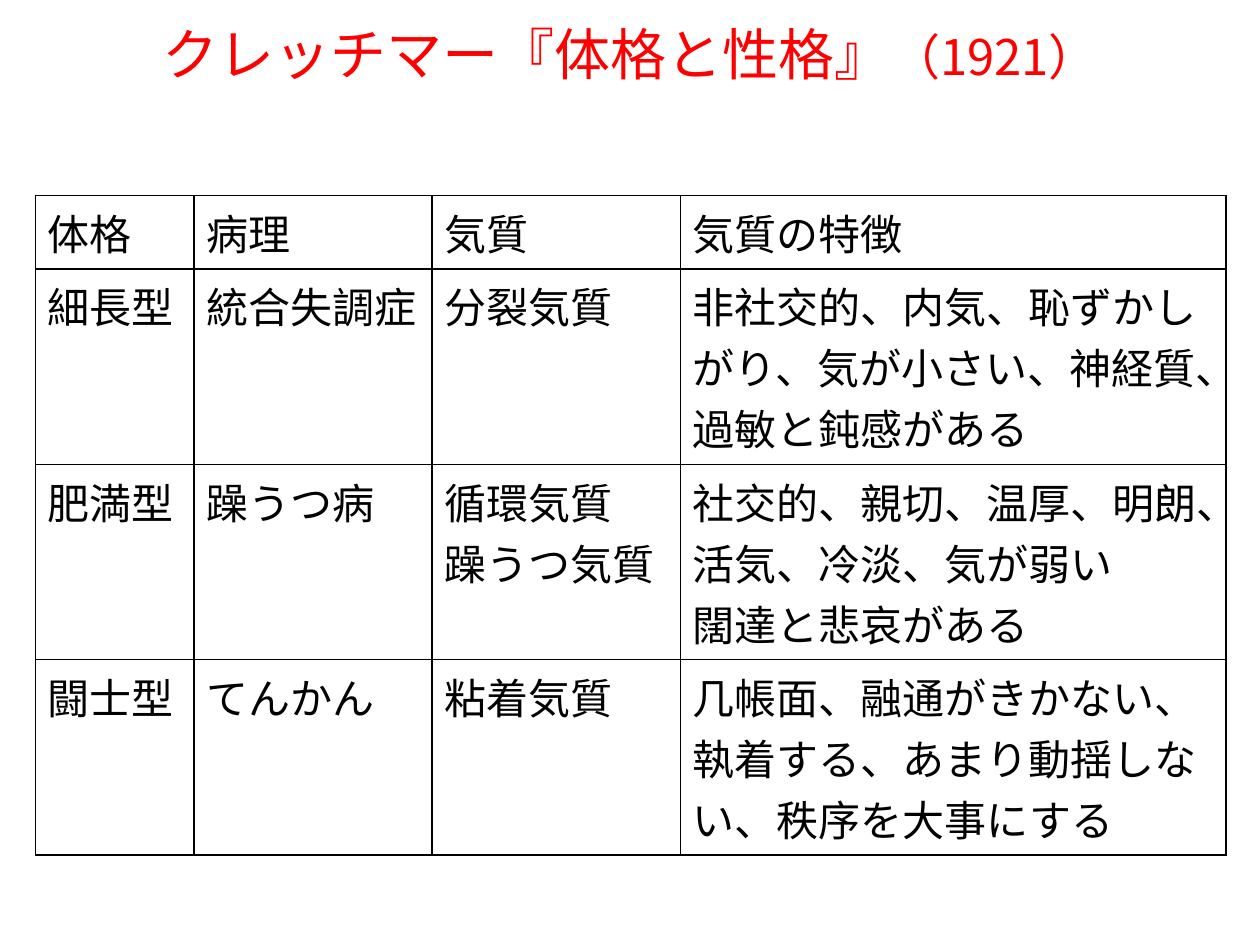
from dataclasses import dataclass

from lxml.etree import SubElement
from pptx import Presentation
from pptx.dml.color import RGBColor
from pptx.enum.text import MSO_ANCHOR, MSO_AUTO_SIZE, PP_ALIGN
from pptx.oxml.ns import qn
from pptx.util import Inches, Pt


@dataclass(frozen=True)
class Theme:
    font: str = "Noto Sans CJK JP"
    title_color: str = "FF0000"
    text_color: str = "000000"
    border_color: str = "000000"
    border_width: float = 1
    title_size: int = 32
    year_size: int = 28
    table_size: int = 24


@dataclass(frozen=True)
class BodyType:
    physique: str
    pathology: str
    temperament: str
    traits: str

    def columns(self) -> tuple[str, ...]:
        return self.physique, self.pathology, self.temperament, self.traits


THEME = Theme()
COLUMN_WIDTHS = (1.26, 1.89, 1.97, 4.33)
HEADER_HEIGHT, BODY_HEIGHT = 0.58, 1.55
ROWS = (
    BodyType("体格", "病理", "気質", "気質の特徴"),
    BodyType("細長型", "統合失調症", "分裂気質",
             "非社交的、内気、恥ずかしがり、気が小さい、神経質、\n過敏と鈍感がある"),
    BodyType("肥満型", "躁うつ病", "循環気質\n躁うつ気質",
             "社交的、親切、温厚、明朗、活気、冷淡、気が弱い\n闊達と悲哀がある"),
    BodyType("闘士型", "てんかん", "粘着気質",
             "几帳面、融通がきかない、執着する、あまり動揺しない、秩序を大事にする"),
)


def format_run(run, size: int, color: str) -> None:
    """Set size, colour and both the Latin and East Asian typeface."""
    run.font.size = Pt(size)
    run.font.name = THEME.font
    run.font.color.rgb = RGBColor.from_string(color)
    SubElement(run.font._element, qn("a:ea"), typeface=THEME.font)


def draw_borders(cell) -> None:
    properties = cell._tc.get_or_add_tcPr()
    for side in ("lnL", "lnR", "lnT", "lnB"):
        line = SubElement(properties, qn(f"a:{side}"), w=str(Pt(THEME.border_width)))
        fill = SubElement(line, qn("a:solidFill"))
        SubElement(fill, qn("a:srgbClr"), val=THEME.border_color)


def add_title(slide, book: str, year: str) -> None:
    title = slide.shapes.title
    title.left, title.top = Inches(0.5), Inches(0.1)
    title.width, title.height = Inches(9), Inches(0.64)
    frame = title.text_frame
    frame.auto_size = MSO_AUTO_SIZE.NONE
    frame.vertical_anchor = MSO_ANCHOR.MIDDLE
    frame.text = book
    heading = frame.paragraphs[0]
    heading.alignment = PP_ALIGN.CENTER
    heading.add_run().text = year
    for run, size in zip(heading.runs, (THEME.title_size, THEME.year_size)):
        format_run(run, size, THEME.title_color)


def fill_cell(cell, text: str) -> None:
    draw_borders(cell)
    cell.fill.background()
    cell.text_frame.text = text
    for paragraph in cell.text_frame.paragraphs:
        for run in paragraph.runs:
            format_run(run, THEME.table_size, THEME.text_color)


def add_body_type_table(slide, body_types: tuple[BodyType, ...]) -> None:
    heights = [HEADER_HEIGHT] + [BODY_HEIGHT] * (len(body_types) - 1)
    table = slide.shapes.add_table(
        len(body_types), len(COLUMN_WIDTHS), Inches(0.28), Inches(1.55),
        Inches(sum(COLUMN_WIDTHS)), Inches(sum(heights))).table
    table.first_row = table.horz_banding = False
    for column, width in zip(table.columns, COLUMN_WIDTHS):
        column.width = Inches(width)
    for row, height, body_type in zip(table.rows, heights, body_types):
        row.height = Inches(height)
        for cell, text in zip(row.cells, body_type.columns()):
            fill_cell(cell, text)


def main() -> None:
    deck = Presentation()
    deck.slide_width, deck.slide_height = Inches(10), Inches(7.5)
    slide = deck.slides.add_slide(deck.slide_layouts[5])
    add_title(slide, "クレッチマー『体格と性格』", "（1921）")
    add_body_type_table(slide, ROWS)
    deck.save("out.pptx")


if __name__ == "__main__":
    main()
